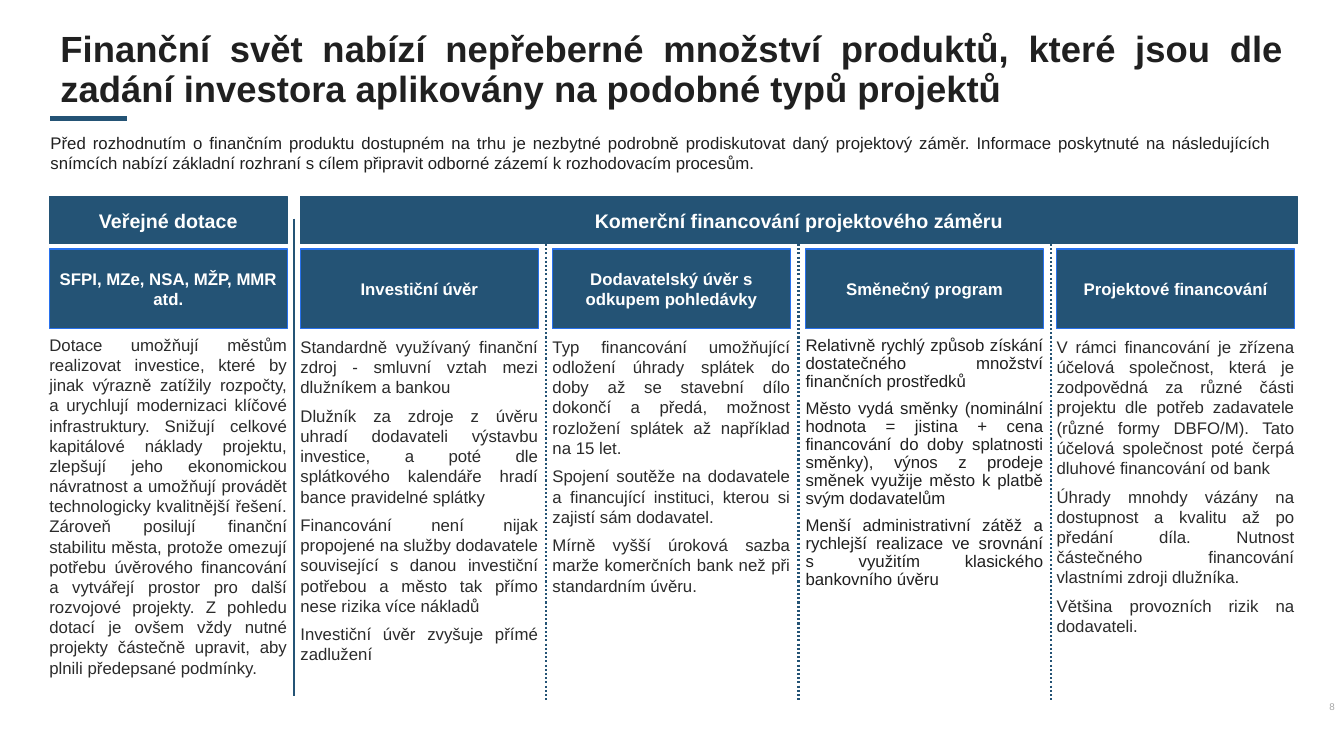
from dataclasses import dataclass

from lxml import etree
from pptx import Presentation
from pptx.dml.color import RGBColor
from pptx.enum.dml import MSO_LINE
from pptx.enum.shapes import MSO_CONNECTOR, MSO_SHAPE
from pptx.enum.text import MSO_ANCHOR, MSO_AUTO_SIZE, PP_ALIGN
from pptx.oxml.ns import qn
from pptx.util import Pt

STRAIGHT = MSO_CONNECTOR.STRAIGHT
RECTANGLE = MSO_SHAPE.RECTANGLE
DOTTED = MSO_LINE.ROUND_DOT
TOP, MIDDLE = MSO_ANCHOR.TOP, MSO_ANCHOR.MIDDLE
FIXED, GROW = MSO_AUTO_SIZE.NONE, MSO_AUTO_SIZE.SHAPE_TO_FIT_TEXT
CENTER, JUSTIFY, RIGHT = PP_ALIGN.CENTER, PP_ALIGN.JUSTIFY, PP_ALIGN.RIGHT
EMU_PER_PX = 9144
TITLE_ONLY = 5
COLUMN_WIDTH = 236


@dataclass(frozen=True)
class Theme:
    font: str = "Arial"
    navy: str = "245375"
    edge: str = "2871ED"
    ink: str = "202020"
    body: str = "2B2B2B"
    white: str = "FFFFFF"
    grey: str = "A6A6A6"
    title_size: int = 26
    banner_size: int = 14
    text_size: int = 12
    number_size: int = 7


@dataclass(frozen=True)
class Style:
    size: int
    color: str
    align: PP_ALIGN = JUSTIFY
    bold: bool = False
    after: int = 0
    spacing: float = 1.0


@dataclass(frozen=True)
class Banner:
    left: int
    width: int
    text: str


@dataclass(frozen=True)
class Column:
    left: int
    heading: str
    texts: tuple[str, ...]
    style: Style
    text_top: int = 334


@dataclass(frozen=True)
class Rule:
    start: tuple[int, int]
    end: tuple[int, int]
    weight: float = 1.5
    dotted: bool = False


THEME = Theme()
TITLE = Style(THEME.title_size, THEME.ink, bold=True, spacing=0.92)
INTRO = Style(THEME.text_size, THEME.ink)
BANNER = Style(THEME.banner_size, THEME.white, CENTER, bold=True)
HEADING = Style(THEME.text_size, THEME.white, CENTER, bold=True)
SINGLE = Style(THEME.text_size, THEME.body, after=3)
LISTED = Style(THEME.text_size, THEME.body, after=6)
TIGHT = Style(THEME.text_size, THEME.ink, after=6, spacing=0.9)
NUMBER = Style(THEME.number_size, THEME.grey, RIGHT)

TITLE_TEXT = "Finanční svět nabízí nepřeberné množství produktů, které jsou dle zadání investora aplikovány na podobné typů projektů"
INTRO_TEXT = (
    "Před rozhodnutím o finančním produktu dostupném na trhu je nezbytné podrobně prodiskutovat daný projektový záměr. "
    "Informace poskytnuté na následujících snímcích nabízí základní rozhraní s cílem připravit odborné zázemí k rozhodovacím procesům."
)
BANNERS = (
    Banner(49, COLUMN_WIDTH, "Veřejné dotace"),
    Banner(298, 989, "Komerční financování projektového záměru"),
)
COLUMNS = (
    Column(49, "SFPI, MZe, NSA, MŽP, MMR atd.", (
        "Dotace umožňují městům realizovat investice, které by jinak výrazně zatížily rozpočty, a urychlují modernizaci "
        "klíčové infrastruktury. Snižují celkové kapitálové náklady projektu, zlepšují jeho ekonomickou návratnost a umožňují "
        "provádět technologicky kvalitnější řešení. Zároveň posilují finanční stabilitu města, protože omezují potřebu "
        "úvěrového financování a vytvářejí prostor pro další rozvojové projekty. Z pohledu dotací je ovšem vždy nutné "
        "projekty částečně upravit, aby plnili předepsané podmínky.",
    ), SINGLE, 332),
    Column(298, "Investiční úvěr", (
        "Standardně využívaný finanční zdroj - smluvní vztah mezi dlužníkem a bankou",
        "Dlužník za zdroje z úvěru uhradí dodavateli výstavbu investice, a poté dle splátkového kalendáře hradí bance pravidelné splátky",
        "Financování není nijak propojené na služby dodavatele související s danou investiční potřebou a město tak přímo nese rizika více nákladů",
        "Investiční úvěr zvyšuje přímé zadlužení",
    ), LISTED),
    Column(548, "Dodavatelský úvěr s odkupem pohledávky", (
        "Typ financování umožňující odložení úhrady splátek do doby až se stavební dílo dokončí a předá, možnost rozložení splátek až například na 15 let.",
        "Spojení soutěže na dodavatele a financující instituci, kterou si zajistí sám dodavatel.",
        "Mírně vyšší úroková sazba marže komerčních bank než při standardním úvěru.",
    ), LISTED),
    Column(799, "Směnečný program", (
        "Relativně rychlý způsob získání dostatečného množství finančních prostředků",
        "Město vydá směnky (nominální hodnota = jistina + cena financování do doby splatnosti směnky), výnos z prodeje směnek využije město k platbě svým dodavatelům",
        "Menší administrativní zátěž a rychlejší realizace ve srovnání s využitím klasického bankovního úvěru",
    ), TIGHT),
    Column(1048, "Projektové financování", (
        "V rámci financování je zřízena účelová společnost, která je zodpovědná za různé části projektu dle potřeb zadavatele "
        "(různé formy DBFO/M). Tato účelová společnost poté čerpá dluhové financování od bank",
        "Úhrady mnohdy vázány na dostupnost a kvalitu až po předání díla. Nutnost částečného financování vlastními zdroji dlužníka.",
        "Většina provozních rizik na dodavateli.",
    ), LISTED),
)
RULES = (
    Rule((50, 118), (126, 118), 3.5),
    Rule((292, 217), (292, 690)),
    *(Rule((x, 242), (x, 695), dotted=True) for x in range(542, 1043, 250)),
)


def px(*lengths: int) -> list[int]:
    return [length * EMU_PER_PX for length in lengths]


def write(box, texts: tuple[str, ...], style: Style, inset: int = 0, anchor=TOP, sizing=FIXED) -> None:
    frame = box.text_frame
    frame.word_wrap = True
    frame.auto_size = sizing
    frame.vertical_anchor = anchor
    frame.margin_left = frame.margin_right = frame.margin_top = frame.margin_bottom = inset * EMU_PER_PX
    frame.text = "\n".join(texts)
    for para in frame.paragraphs:
        para.alignment = style.align
        para.line_spacing = style.spacing
        para.space_before = Pt(0)
        para.space_after = Pt(style.after)
        para.font.name = THEME.font
        para.font.size = Pt(style.size)
        para.font.bold = style.bold
        para.font.color.rgb = RGBColor.from_string(style.color)


def add_text(shapes, area: tuple[int, int, int, int], texts: tuple[str, ...], style: Style, sizing=FIXED) -> None:
    write(shapes.add_textbox(*px(*area)), texts, style, sizing=sizing)


def add_panel(shapes, area: tuple[int, int, int, int], text: str, style: Style, edge: str, inset: int) -> None:
    panel = shapes.add_shape(RECTANGLE, *px(*area))
    panel.shadow.inherit = False
    panel.fill.solid()
    panel.fill.fore_color.rgb = RGBColor.from_string(THEME.navy)
    panel.line.color.rgb = RGBColor.from_string(edge)
    panel.line.width = Pt(0.75)
    write(panel, (text,), style, inset, MIDDLE)


def add_column(page, column: Column) -> None:
    shapes = page.shapes.add_group_shape().shapes
    add_panel(shapes, (column.left, 247, COLUMN_WIDTH, 79), column.heading, HEADING, THEME.edge, 4)
    add_text(shapes, (column.left, column.text_top, COLUMN_WIDTH, 328), column.texts, column.style, GROW)


def add_rule(page, rule: Rule) -> None:
    line = page.shapes.add_connector(STRAIGHT, *px(*rule.start, *rule.end))
    line.line.color.rgb = RGBColor.from_string(THEME.navy)
    line.line.width = Pt(rule.weight)
    if rule.dotted:
        line.line.dash_style = DOTTED
    etree.SubElement(line._element.spPr, qn("a:effectLst"))


def main() -> None:
    deck = Presentation()
    deck.slide_width, deck.slide_height = px(1333, 750)
    page = deck.slides.add_slide(deck.slide_layouts[TITLE_ONLY])
    title = page.shapes.title
    title.left, title.top, title.width, title.height = px(50, 28, 1234, 83)
    write(title, (TITLE_TEXT,), TITLE, 10, MIDDLE)
    add_text(page.shapes, (50, 132, 1212, 73), (INTRO_TEXT,), INTRO)
    for banner in BANNERS:
        add_panel(page.shapes, (banner.left, 195, banner.width, 47), banner.text, BANNER, THEME.navy, 8)
    for column in COLUMNS:
        add_column(page, column)
    for rule in RULES:
        add_rule(page, rule)
    add_text(page.shapes, (1024, 695, 300, 40), ("8",), NUMBER)
    deck.save("out.pptx")


if __name__ == "__main__":
    main()
